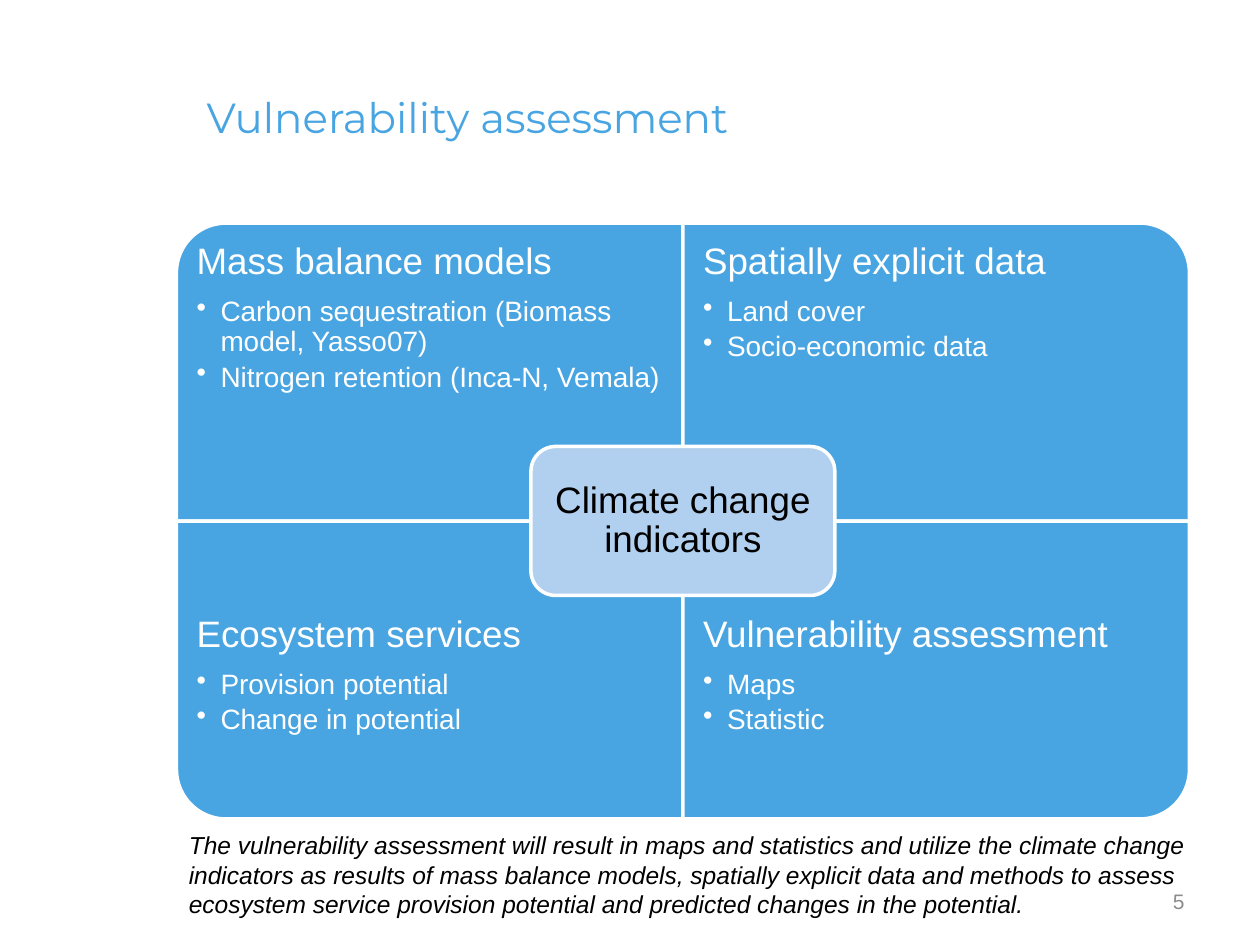
from lxml import etree
from pptx import Presentation
from pptx.dml.color import RGBColor
from pptx.enum.shapes import MSO_SHAPE
from pptx.enum.text import MSO_ANCHOR, PP_ALIGN
from pptx.oxml.ns import qn
from pptx.util import Inches, Pt

CORNER_CARD = MSO_SHAPE.ROUND_1_RECTANGLE
ROUNDED_CARD = MSO_SHAPE.ROUNDED_RECTANGLE
TOP, MIDDLE = MSO_ANCHOR.TOP, MSO_ANCHOR.MIDDLE
LEFT, CENTER, RIGHT = PP_ALIGN.LEFT, PP_ALIGN.CENTER, PP_ALIGN.RIGHT

COLORS = {"blue": "48A5E1", "pale": "B1CFEE", "white": "FFFFFF",
          "black": "000000", "grey": "8C8C8C"}

TITLE = {"size": Pt(24), "name": "Montserrat"}
HEADING = {"size": Pt(21), "name": "Arial"}
BULLET = {"size": Pt(16), "name": "Arial"}
SUMMARY = {"size": Pt(14), "name": "Arial", "italic": True}
NUMBER = {"size": Pt(12), "name": "Arial"}

HEADING_SPACING = {"line_spacing": 0.9, "space_after": Pt(8.4)}
BULLET_SPACING = {"level": 1, "line_spacing": 0.9, "space_after": Pt(2.8)}

QUADRANTS = [
    ("Mass balance models", 270,
     ["Carbon sequestration (Biomass model, Yasso07)",
      "Nitrogen retention (Inca-N, Vemala)"]),
    ("Spatially explicit data", 0, ["Land cover", "Socio-economic data"]),
    ("Ecosystem services", 180, ["Provision potential", "Change in potential"]),
    ("Vulnerability assessment", 90, ["Maps", "Statistic"]),
]
SUMMARY_LINES = [
    "The vulnerability assessment will result in maps and statistics and utilize the climate change",
    "indicators as results of mass balance models, spatially explicit data and methods to assess",
    "ecosystem service provision potential and predicted changes in the potential.",
]


def rgb(color):
    return RGBColor.from_string(COLORS[color])


def apply(target, values):
    for attribute, value in values.items():
        setattr(target, attribute, value)


def write(paragraph, text, style, color, spacing=None):
    apply(paragraph, spacing or {})
    run = paragraph.add_run()
    run.text = text
    apply(run.font, style)
    run.font.color.rgb = rgb(color)


def add_bullet(paragraph):
    properties = paragraph._p.get_or_add_pPr()
    properties.set("marL", str(Inches(0.19)))
    properties.set("indent", str(-Inches(0.19)))
    etree.SubElement(properties, qn("a:buChar")).set("char", "•")


def add_frame(shapes, box, inset=None, anchor=TOP, wrap=True):
    frame = shapes.add_textbox(*map(Inches, box)).text_frame
    apply(frame, {"word_wrap": wrap, "vertical_anchor": anchor})
    if inset is not None:
        sides = ("left", "top", "right", "bottom")
        apply(frame, {f"margin_{side}": Inches(inset) for side in sides})
    return frame


def add_card(shapes, preset, box, fill, rotation=0):
    card = shapes.add_shape(preset, *map(Inches, box))
    card.rotation = rotation
    card.shadow.inherit = False
    card.fill.solid()
    card.fill.fore_color.rgb = rgb(fill)
    card.line.color.rgb = rgb("white")
    card.line.width = Pt(2)


def add_title(slide, box):
    title = slide.shapes.title
    apply(title, dict(zip(("left", "top", "width", "height"), map(Inches, box))))
    title.text_frame.vertical_anchor = MIDDLE
    write(title.text_frame.paragraphs[0], "Vulnerability assessment",
          TITLE, "blue", {"alignment": LEFT})


def add_quadrant(shapes, box, heading, rotation, items, text_top):
    left, top, width, height = box
    card_box = box
    if rotation % 180:
        shift = (width - height) / 2
        card_box = (left + shift, top - shift, height, width)
    add_card(shapes, CORNER_CARD, card_box, "blue", rotation)
    frame = add_frame(shapes, (left, text_top, width, height * 0.75), 0.16)
    write(frame.paragraphs[0], heading, HEADING, "white", HEADING_SPACING)
    for item in items:
        paragraph = frame.add_paragraph()
        write(paragraph, item, BULLET, "white", BULLET_SPACING)
        add_bullet(paragraph)


def add_matrix(slide, box):
    left, top, width, height = box
    shapes = slide.shapes.add_group_shape().shapes
    cell_width, cell_height = width / 2, height / 2
    for index, (heading, rotation, items) in enumerate(QUADRANTS):
        row, column = divmod(index, 2)
        cell = (left + column * cell_width, top + row * cell_height,
                cell_width, cell_height)
        text_top = cell[1] + row * cell_height / 4
        add_quadrant(shapes, cell, heading, rotation, items, text_top)

    hub_width, hub_height = cell_width * 0.6, cell_height / 2
    hub = (left + (width - hub_width) / 2, top + (height - hub_height) / 2,
           hub_width, hub_height)
    add_card(shapes, ROUNDED_CARD, hub, "pale")
    inner = (hub[0] + 0.06, hub[1] + 0.06, hub_width - 0.12, hub_height - 0.12)
    frame = add_frame(shapes, inner, 0.09, MIDDLE)
    write(frame.paragraphs[0], "Climate change indicators", HEADING, "black",
          {"alignment": CENTER, "line_spacing": 0.9})


def add_summary(slide, box):
    frame = add_frame(slide.shapes, box, wrap=False)
    for index, line in enumerate(SUMMARY_LINES):
        paragraph = frame.add_paragraph() if index else frame.paragraphs[0]
        write(paragraph, line, SUMMARY, "black")


def add_slide_number(slide, box):
    frame = add_frame(slide.shapes, box, anchor=MIDDLE)
    write(frame.paragraphs[0], "5", NUMBER, "grey", {"alignment": RIGHT})


def main():
    presentation = Presentation()
    presentation.slide_width = Inches(10)
    presentation.slide_height = Inches(7.5)
    slide = presentation.slides.add_slide(presentation.slide_layouts[5])
    add_title(slide, (1.54, 0.3, 7.96, 1.25))
    add_slide_number(slide, (8.86, 6.95, 0.64, 0.4))
    add_matrix(slide, (1.4, 1.77, 8.04, 4.73))
    add_summary(slide, (1.4, 6.54, 8.15, 0.81))
    presentation.save("out.pptx")


if __name__ == "__main__":
    main()
